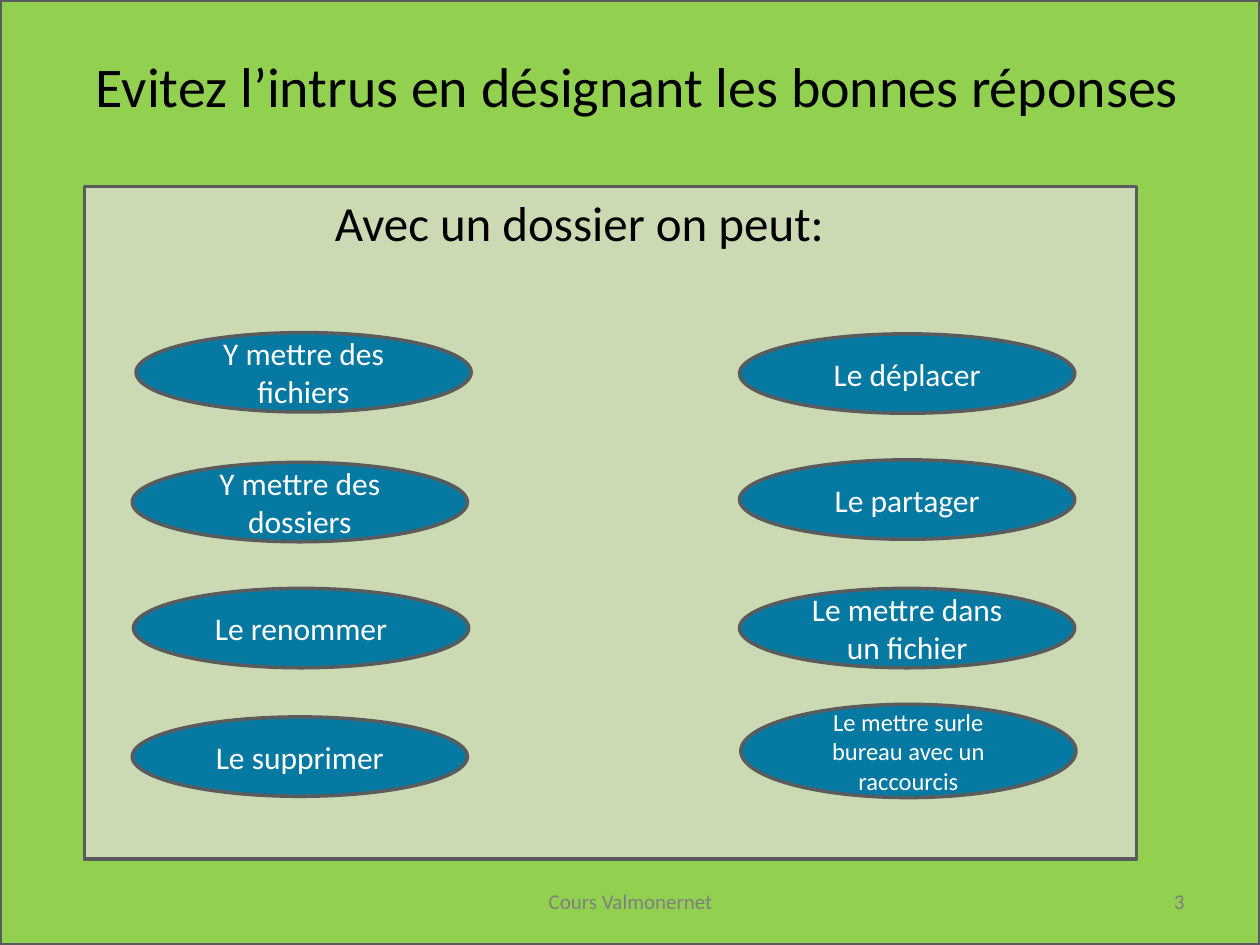
"""Build the quiz slide about what can be done with a folder."""
from dataclasses import dataclass

from pptx import Presentation
from pptx import util as u
from pptx.dml.color import RGBColor
from pptx.enum import shapes, text

GREEN = RGBColor(0x92, 0xD0, 0x50)
SAGE = RGBColor(0xCC, 0xDA, 0xB3)
BLUE = RGBColor(0x06, 0x79, 0xA3)
SLATE = RGBColor(0x5A, 0x5B, 0x5D)
GREY = RGBColor(0x80, 0x80, 0x80)
BLACK = RGBColor(0, 0, 0)
WHITE = RGBColor(0xFF, 0xFF, 0xFF)


@dataclass(frozen=True)
class Area:
    left: float
    top: float
    width: float
    height: float

    def lengths(self) -> tuple:
        return tuple(u.Inches(n) for n in (self.left, self.top, self.width, self.height))


@dataclass(frozen=True)
class Answer:
    wording: str
    left: float
    top: float
    height: float = 0.63
    size: int = 18


ANSWERS = (
    Answer("Le mettre surle bureau avec un raccourcis", 5.88, 5.59, 0.74, 14),
    Answer("Le mettre dans un fichier", 5.87, 4.67),
    Answer("Le partager", 5.87, 3.65),
    Answer("Le déplacer", 5.87, 2.65),
    Answer("Y mettre des fichiers", 1.08, 2.64),
    Answer("Y mettre des dossiers", 1.05, 3.67),
    Answer("Le renommer", 1.06, 4.67),
    Answer("Le supprimer", 1.05, 5.69),
)
ANSWER_WIDTH = 2.66


def write(box, wording: str, *, size: int, color: RGBColor, align=text.PP_ALIGN.LEFT,
          anchor=text.MSO_ANCHOR.TOP, wrap: bool = True) -> None:
    frame = box.text_frame
    frame.word_wrap = wrap
    frame.auto_size = text.MSO_AUTO_SIZE.NONE
    frame.vertical_anchor = anchor
    para = frame.paragraphs[0]
    para.alignment = align
    span = para.add_run()
    span.text = wording
    span.font.name = "Calibri"
    span.font.size = u.Pt(size)
    span.font.color.rgb = color


def add_outlined(page, kind, area: Area, fill: RGBColor):
    box = page.shapes.add_shape(kind, *area.lengths())
    box.shadow.inherit = False
    box.fill.solid()
    box.fill.fore_color.rgb = fill
    box.line.color.rgb = SLATE
    box.line.width = u.Pt(2)
    return box


def add_label(page, area: Area, wording: str, **style) -> None:
    write(page.shapes.add_textbox(*area.lengths()), wording, **style)


def place_title(page, area: Area, wording: str) -> None:
    title = page.shapes.title
    title.left, title.top, title.width, title.height = area.lengths()
    write(title, wording, size=32, color=BLACK, wrap=False)
    title.element.getparent().append(title.element)


def add_answer(page, answer: Answer) -> None:
    area = Area(answer.left, answer.top, ANSWER_WIDTH, answer.height)
    box = add_outlined(page, shapes.MSO_SHAPE.OVAL, area, BLUE)
    write(box, answer.wording, size=answer.size, color=WHITE,
          align=text.PP_ALIGN.CENTER, anchor=text.MSO_ANCHOR.MIDDLE)


def main() -> None:
    deck = Presentation()
    deck.slide_width, deck.slide_height = u.Inches(10), u.Inches(7.5)
    page = deck.slides.add_slide(deck.slide_layouts.get_by_name("Title Only"))

    add_outlined(page, shapes.MSO_SHAPE.RECTANGLE, Area(0, 0, 10, 7.5), GREEN)
    add_outlined(page, shapes.MSO_SHAPE.RECTANGLE, Area(0.67, 1.48, 8.35, 5.34), SAGE)
    place_title(page, Area(0.66, 0.36, 8.87, 0.64),
                "Evitez l’intrus en désignant les bonnes réponses")
    add_label(page, Area(2.56, 1.48, 4.13, 0.57), "Avec un dossier on peut:",
              size=28, color=BLACK, wrap=False)
    for answer in ANSWERS:
        add_answer(page, answer)

    footer = {"size": 12, "color": GREY, "anchor": text.MSO_ANCHOR.MIDDLE}
    add_label(page, Area(3.42, 6.95, 3.17, 0.4), "Cours Valmonernet",
              align=text.PP_ALIGN.CENTER, **footer)
    add_label(page, Area(7.17, 6.95, 2.33, 0.4), "3",
              align=text.PP_ALIGN.RIGHT, **footer)
    deck.save("out.pptx")


if __name__ == "__main__":
    main()
